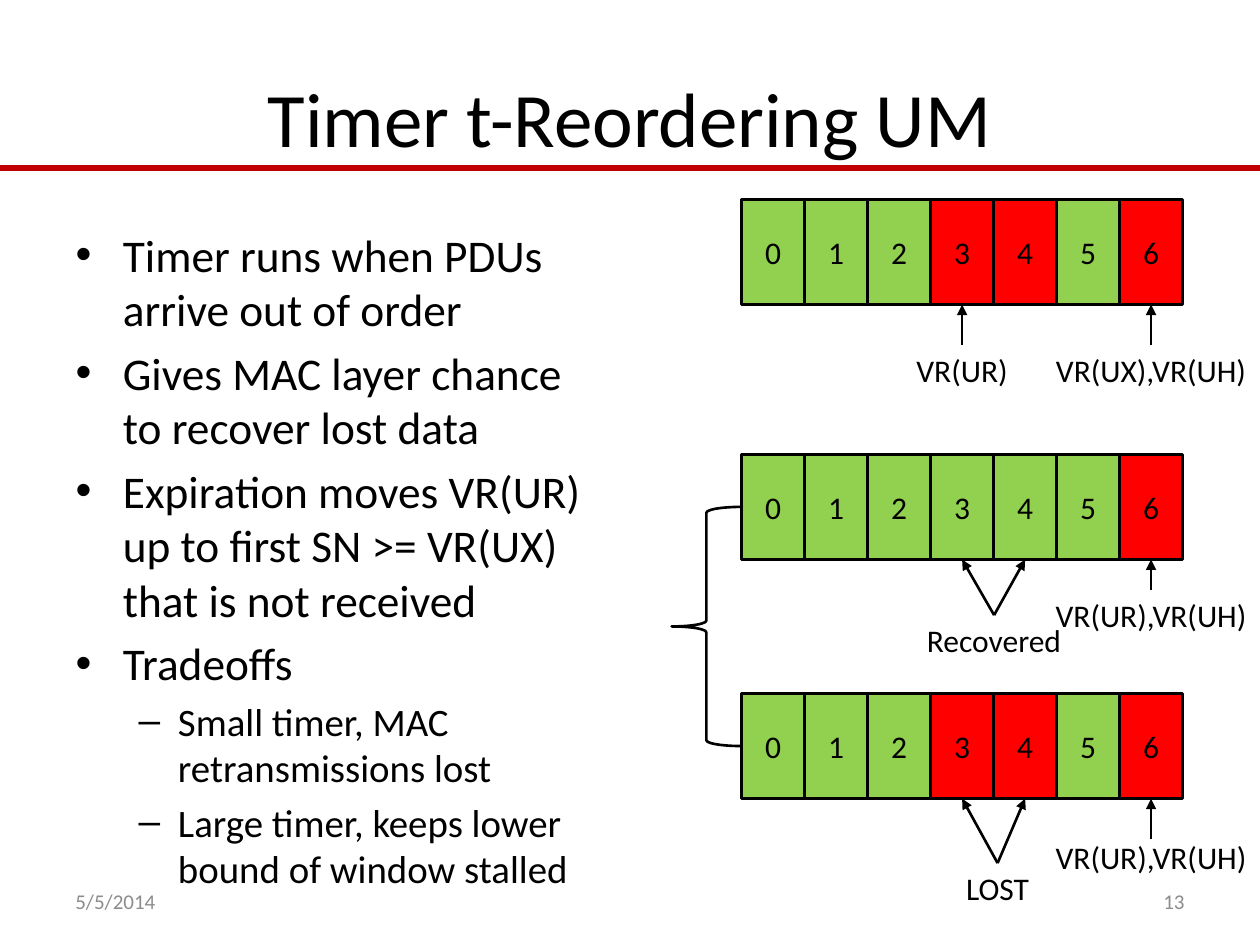
from dataclasses import dataclass

import pptx
import pptx.dml.color
import pptx.enum.shapes
import pptx.enum.text
import pptx.oxml.ns
import pptx.util
from lxml import etree

Cm, Pt = pptx.util.Cm, pptx.util.Pt
ALIGN = pptx.enum.text.PP_ALIGN
MID = pptx.enum.text.MSO_ANCHOR.MIDDLE
KIND = pptx.enum.shapes.MSO_SHAPE

HUES = {"ink": "000000", "rule": "C00000", "grey": "8C8C8C",
        "got": "92D050", "lost": "FF0000"}
LEFT, WIDE, HIGH = 14.95, 1.27, 2.12


@dataclass
class Note:
    text: str
    mid: float      # centre of the label
    top: float
    start: float    # where its arrows begin
    cells: tuple    # cells the arrows point to


@dataclass
class Row:
    top: float
    lost: tuple
    notes: tuple


def center(num: int) -> float:
    return LEFT + (num + 0.5) * WIDE


ROWS = (
    Row(4.02, (3, 4, 6), (
        Note("VR(UR)", center(3), 6.96, 6.96, (3,)),
        Note("VR(UX),VR(UH)", center(6), 6.96, 6.96, (6,)))),
    Row(9.16, (6,), (
        Note("VR(UR),VR(UH)", center(6), 11.89, 11.89, (6,)),
        Note("Recovered", 20.04, 12.4, 12.4, (3, 4)))),
    Row(13.98, (3, 4, 6), (
        Note("VR(UR),VR(UH)", center(6), 16.76, 16.92, (6,)),
        Note("LOST", 20.11, 17.4, 17.4, (3, 4)))),
)

POINTS = (
    ("Timer runs when PDUs arrive out of order", 0),
    ("Gives MAC layer chance to recover lost data", 0),
    ("Expiration moves VR(UR) up to first SN >= VR(UX) that is not received", 0),
    ("Tradeoffs", 0),
    ("Small timer, MAC retransmissions lost", 1),
    ("Large timer, keeps lower bound of window stalled", 1),
)


def color(name: str):
    return pptx.dml.color.RGBColor.from_string(HUES[name])


def apply(item, **form) -> None:
    """Set every given attribute on the item."""
    for key, value in form.items():
        setattr(item, key, value)


def style(para, size: float, hue: str = "ink") -> None:
    apply(para.font, name="Calibri", size=Pt(size))
    para.font.color.rgb = color(hue)


def place(shape, left: float, top: float, width: float, height: float) -> None:
    apply(shape, left=Cm(left), top=Cm(top), width=Cm(width), height=Cm(height))


def stroke(shape, width: float, hue: str = "ink") -> None:
    shape.line.width = Pt(width)
    shape.line.color.rgb = color(hue)


def label(slide, text: str, area: tuple, size: float, hue: str = "ink",
          align=ALIGN.CENTER, anchor=None) -> None:
    frame = slide.shapes.add_textbox(*map(Cm, area)).text_frame
    apply(frame, text=text, word_wrap=False, vertical_anchor=anchor)
    para = frame.paragraphs[0]
    para.alignment = align
    style(para, size, hue)


def wire(slide, ends: tuple, width: float, hue: str = "ink", head: bool = True) -> None:
    """Draw a straight line, with an arrowhead at its end if asked."""
    line = slide.shapes.add_connector(
        pptx.enum.shapes.MSO_CONNECTOR.STRAIGHT, *map(Cm, ends))
    stroke(line, width, hue)
    qn = pptx.oxml.ns.qn
    if head:
        etree.SubElement(line.line._get_or_add_ln(), qn("a:tailEnd"), type="triangle")
    etree.SubElement(line._element.spPr, qn("a:effectLst"))


def cell(slide, num: int, top: float, hue: str) -> None:
    box = slide.shapes.add_shape(
        KIND.RECTANGLE, *map(Cm, (LEFT + num * WIDE, top, WIDE, HIGH)))
    box.shadow.inherit = False
    box.fill.solid()
    box.fill.fore_color.rgb = color(hue)
    stroke(box, 2)
    apply(box.text_frame, text=str(num), vertical_anchor=MID)
    para = box.text_frame.paragraphs[0]
    para.alignment = ALIGN.CENTER
    style(para, 18)


def window(slide, row: Row) -> None:
    """Draw one row of cells with its labels and arrows."""
    for num in range(7):
        cell(slide, num, row.top, "lost" if num in row.lost else "got")
    for note in row.notes:
        width = 4.4
        label(slide, note.text, (note.mid - width / 2, note.top, width, 1.02), 18)
        for num in note.cells:
            wire(slide, (note.mid, note.start, center(num), row.top + HIGH), 1.5)


def prose(slide) -> None:
    """Fill the title and the bullet list."""
    title, body = slide.placeholders
    place(title, 1.27, 0.76, 22.86, 3.18)
    apply(title.text_frame, text="Timer t-Reordering UM", vertical_anchor=MID)
    style(title.text_frame.paragraphs[0], 44)

    place(body, 1.27, 4.45, 11.23, 12.57)
    frame = body.text_frame
    frame.text = "\n".join(text for text, _ in POINTS)
    frame.auto_size = pptx.enum.text.MSO_AUTO_SIZE.NONE
    for rank, (para, (_, level)) in enumerate(zip(frame.paragraphs, POINTS)):
        size = (25.9, 22.2)[level]
        apply(para, level=level, space_before=Pt(round(size / 5, 1) if rank else 0))
        style(para, size)


def main() -> None:
    deck = pptx.Presentation()
    apply(deck, slide_width=Cm(25.4), slide_height=Cm(19.05))
    slide = deck.slides.add_slide(deck.slide_layouts[1])
    wire(slide, (0, 3.39, 25.4, 3.39), 3.25, "rule", head=False)
    prose(slide)
    for text, left, align in (("5/5/2014", 1.27, ALIGN.LEFT), ("13", 18.2, ALIGN.RIGHT)):
        label(slide, text, (left, 17.65, 5.93, 1.02), 12, "grey", align, MID)
    for row in ROWS:
        window(slide, row)
    brace = slide.shapes.add_shape(KIND.LEFT_BRACE, *map(Cm, (13.54, 10.22, 1.4, 4.82)))
    brace.shadow.inherit = False
    brace.fill.background()
    stroke(brace, 1.5)
    deck.save("out.pptx")


if __name__ == "__main__":
    main()
